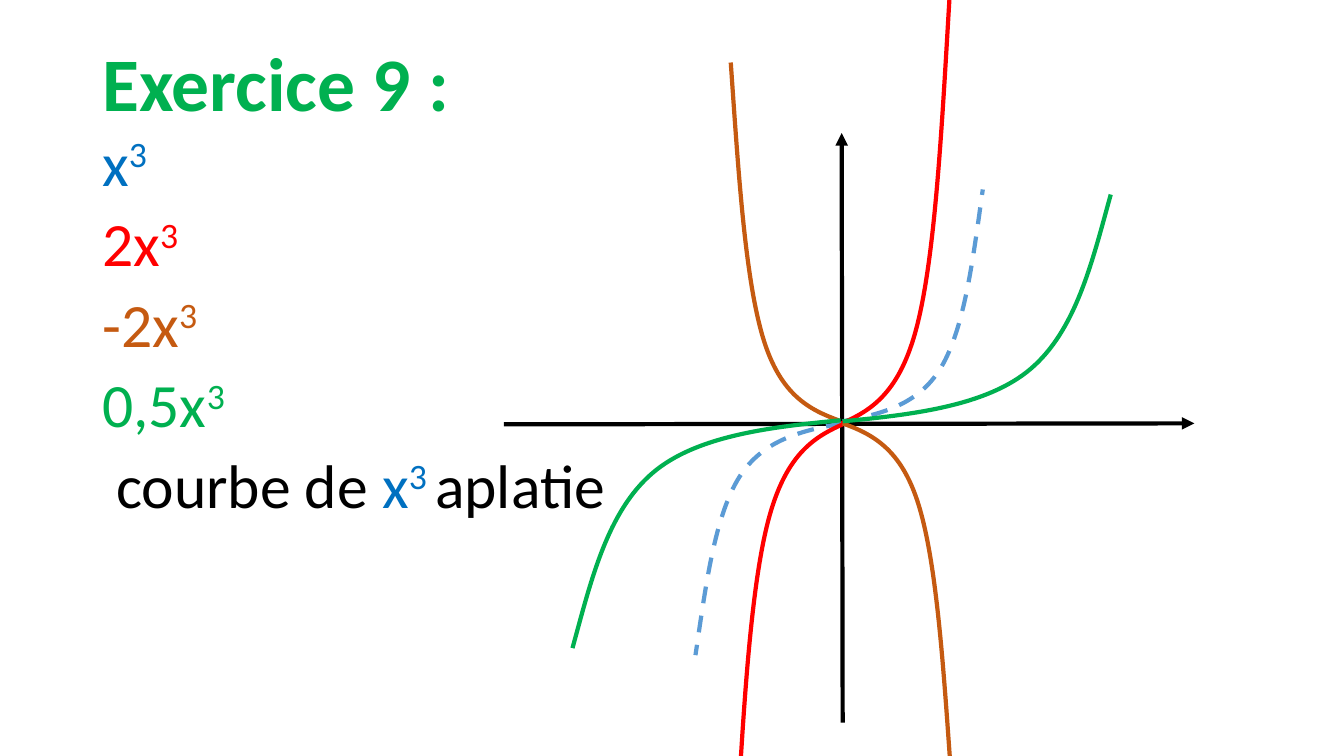
from lxml import etree
from pptx import Presentation
from pptx.dml.color import RGBColor
from pptx.enum.dml import MSO_LINE
from pptx.enum.shapes import MSO_CONNECTOR
from pptx.enum.text import MSO_ANCHOR
from pptx.oxml.ns import qn
from pptx.util import Inches, Pt

STRAIGHT = MSO_CONNECTOR.STRAIGHT
DASH = MSO_LINE.DASH
TOP, MIDDLE = MSO_ANCHOR.TOP, MSO_ANCHOR.MIDDLE

COLORS = {"black": "000000", "blue": "0070C0", "light": "5B9BD5",
          "red": "FF0000", "brown": "C55A11", "green": "00B050"}

prs = Presentation()
prs.slide_width, prs.slide_height = Inches(40 / 3), Inches(7.5)
s = prs.slides.add_slide(prs.slide_layouts[6])

# Grid of 40 columns by 30 rows
COL, ROW = prs.slide_width / 40, prs.slide_height / 30


def at(col, row):
    return round(col * COL), round(row * ROW)


def add_text(top, height, anchor, paragraphs, font, spacing):
    tf = s.shapes.add_textbox(*at(2.75, top), *at(34.5, height)).text_frame
    tf.word_wrap, tf.vertical_anchor = True, anchor
    for i, runs in enumerate(paragraphs):
        p = tf.add_paragraph() if i else tf.paragraphs[0]
        for key, value in spacing.items():
            setattr(p, key, value)
        for text, color, raised in runs:
            r = p.add_run()
            r.text = text
            for key, value in font.items():
                setattr(r.font, key, value)
            r.font.color.rgb = RGBColor.from_string(COLORS[color])
            if raised:
                r.font._element.set("baseline", "30000")


# Title and list of functions
add_text(1.6, 3.7, MIDDLE, [[("Exercice 9 :", "green", False)]],
         {"name": "Calibri", "size": Pt(54), "bold": True},
         {"line_spacing": 0.9})

functions = [("x", "blue"), ("2x", "red"), ("-2x", "brown"), ("0,5x", "green")]
lines = [[(base, color, False), ("3", color, True)] for base, color in functions]
lines.append([(" courbe de ", "black", False), ("x", "blue", False),
              ("3 ", "blue", True), ("aplatie", "black", False)])
add_text(5.08, 24.92, TOP, lines, {"name": "Calibri", "size": Pt(44)},
         {"line_spacing": 0.9, "space_before": Pt(10)})

# Axes with arrowheads
for start, end in [((15, 16.84), (35.55, 16.8)), ((25.08, 28.68), (25.05, 5.28))]:
    axis = s.shapes.add_connector(STRAIGHT, *at(*start), *at(*end))
    axis.line.width = Pt(3)
    axis.line.color.rgb = RGBColor.from_string(COLORS["black"])
    etree.SubElement(axis.line._get_or_add_ln(), qn("a:tailEnd"), type="triangle")
    etree.SubElement(axis._element.spPr, qn("a:effectLst"))

# Unit branch of a cubic: control points of two Bezier pieces from (0, 0)
UNIT = [(0.27, 0.03), (0.54, 0.07), (0.7, 0.23),
        (0.87, 0.4), (0.93, 0.7), (1, 1)]

# Branches: colour, start near the origin, far end
branches = [
    ("light", (25.08, 16.72), (29.25, 7.52)),
    ("light", (25.08, 16.8), (20.7, 26)),
    ("red", (25.05, 16.8), (28.26, -0.08)),
    ("red", (25.08, 16.84), (21.87, 34.2)),
    ("brown", (24.96, 16.68), (21.75, 2.48)),
    ("brown", (25.08, 16.8), (28.32, 31)),
    ("green", (25.08, 16.72), (33.06, 7.72)),
    ("green", (25.02, 16.68), (17.04, 25.72)),
]
for color, (x0, y0), (x1, y1) in branches:
    builder = s.shapes.build_freeform(*at(x0, y0))
    builder.add_line_segments(
        [at(x0 + u * (x1 - x0), y0 + v * (y1 - y0)) for u, v in UNIT], close=False)
    sp = builder.convert_to_shape()

    # Turn each three straight segments into one Bezier piece
    outline = next(sp._element.iter(qn("a:path")))
    segments = outline.findall(qn("a:lnTo"))
    for i in range(0, len(segments), 3):
        curve = etree.SubElement(outline, qn("a:cubicBezTo"))
        for segment in segments[i:i + 3]:
            curve.append(segment[0])
            outline.remove(segment)

    sp.shadow.inherit = False
    sp.fill.background()
    sp.line.width = Pt(3)
    sp.line.color.rgb = RGBColor.from_string(COLORS[color])
    if color == "light":
        sp.line.dash_style = DASH

prs.save("out.pptx")
